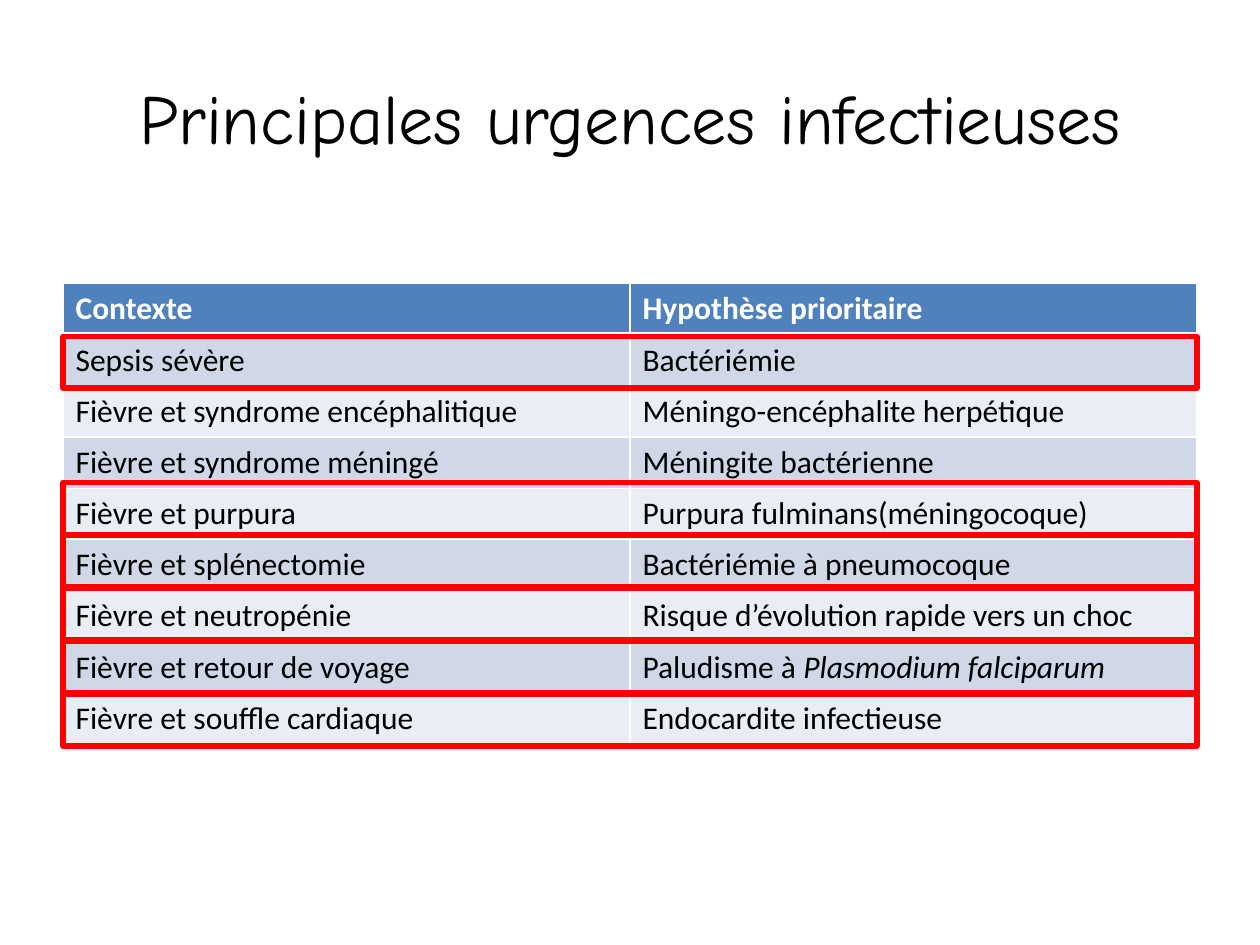
from lxml.etree import SubElement
from pptx import Presentation
from pptx.dml.color import RGBColor
from pptx.enum.shapes import MSO_SHAPE
from pptx.enum.text import MSO_ANCHOR, PP_ALIGN
from pptx.oxml.ns import qn
from pptx.util import Pt

TITLE = "Principales urgences infectieuses"
HEADER = ("Contexte", "Hypothèse prioritaire")
EMERGENCIES = [
    ("Sepsis sévère", "Bactériémie"),
    ("Fièvre et syndrome encéphalitique", "Méningo-encéphalite herpétique"),
    ("Fièvre et syndrome méningé", "Méningite bactérienne"),
    ("Fièvre et purpura", "Purpura fulminans(méningocoque)"),
    ("Fièvre et splénectomie", "Bactériémie à pneumocoque"),
    ("Fièvre et neutropénie", "Risque d’évolution rapide vers un choc"),
    ("Fièvre et retour de voyage", ("Paludisme à ", "Plasmodium falciparum")),
    ("Fièvre et souffle cardiaque", "Endocardite infectieuse"),
]

THEME = {
    "title_font": "Comic Neue", "title_size": 40,
    "body_font": "Calibri", "body_size": 18,
    "text": "000000", "header_text": "FFFFFF", "header": "4F81BD",
    "bands": ("D0D8E8", "E9EDF4"), "rule": "FFFFFF", "frame": "FF0000",
}

LEFT, WIDTH = 36, 648
TABLE_TOP, ROW_HEIGHT = 162, 29.28
FRAME_HEIGHT, FRAME_WIDTH = 29.5, 3
SEPSIS_TOP, PURPURA_TOP, FRAME_STEP = 192.25, 275.75, 30.25
FRAME_TOPS = [SEPSIS_TOP] + [PURPURA_TOP + FRAME_STEP * i for i in range(5)]


def add_run(paragraph, text, font, size, color, bold=False, italic=False):
    run = paragraph.add_run()
    run.text = text
    run.font.name = font
    run.font.size = Pt(size)
    run.font.color.rgb = RGBColor.from_string(color)
    run.font.bold = bold
    run.font.italic = italic


def set_borders(cell, top, bottom):
    properties = cell._tc.get_or_add_tcPr()
    widths = {"a:lnL": 1, "a:lnR": 1, "a:lnT": top, "a:lnB": bottom}
    for position, (tag, width) in enumerate(widths.items()):
        line = SubElement(properties, qn(tag), w=str(Pt(width)))
        SubElement(SubElement(line, qn("a:solidFill")), qn("a:srgbClr"), val=THEME["rule"])
        properties.insert(position, line)


def add_title(slide):
    frame = slide.shapes.add_textbox(Pt(LEFT), Pt(21.6), Pt(WIDTH), Pt(90)).text_frame
    frame.word_wrap = True
    frame.vertical_anchor = MSO_ANCHOR.MIDDLE
    paragraph = frame.paragraphs[0]
    paragraph.alignment = PP_ALIGN.CENTER
    add_run(paragraph, TITLE, THEME["title_font"], THEME["title_size"], THEME["text"])


def add_emergencies(slide):
    rows = [HEADER] + EMERGENCIES
    table = slide.shapes.add_table(
        len(rows), len(HEADER), Pt(LEFT), Pt(TABLE_TOP), Pt(WIDTH), Pt(ROW_HEIGHT * len(rows))
    ).table
    for index, row in enumerate(rows):
        table.rows[index].height = Pt(ROW_HEIGHT)
        is_header = index == 0
        fill = THEME["header"] if is_header else THEME["bands"][(index - 1) % 2]
        color = THEME["header_text"] if is_header else THEME["text"]
        for column, content in enumerate(row):
            cell = table.cell(index, column)
            cell.fill.solid()
            cell.fill.fore_color.rgb = RGBColor.from_string(fill)
            set_borders(cell, 3 if index == 1 else 1, 3 if is_header else 1)
            parts = (content,) if isinstance(content, str) else content
            for order, part in enumerate(parts):
                add_run(cell.text_frame.paragraphs[0], part, THEME["body_font"],
                        THEME["body_size"], color, bold=is_header, italic=order == 1)


def add_frames(slide):
    for top in FRAME_TOPS:
        frame = slide.shapes.add_shape(
            MSO_SHAPE.RECTANGLE, Pt(LEFT), Pt(top), Pt(WIDTH), Pt(FRAME_HEIGHT)
        )
        frame.shadow.inherit = False
        frame.fill.background()
        frame.line.color.rgb = RGBColor.from_string(THEME["frame"])
        frame.line.width = Pt(FRAME_WIDTH)


def main():
    deck = Presentation()
    deck.slide_width, deck.slide_height = Pt(720), Pt(540)
    slide = deck.slides.add_slide(deck.slide_layouts[6])
    add_title(slide)
    add_emergencies(slide)
    add_frames(slide)
    deck.save("out.pptx")


if __name__ == "__main__":
    main()
